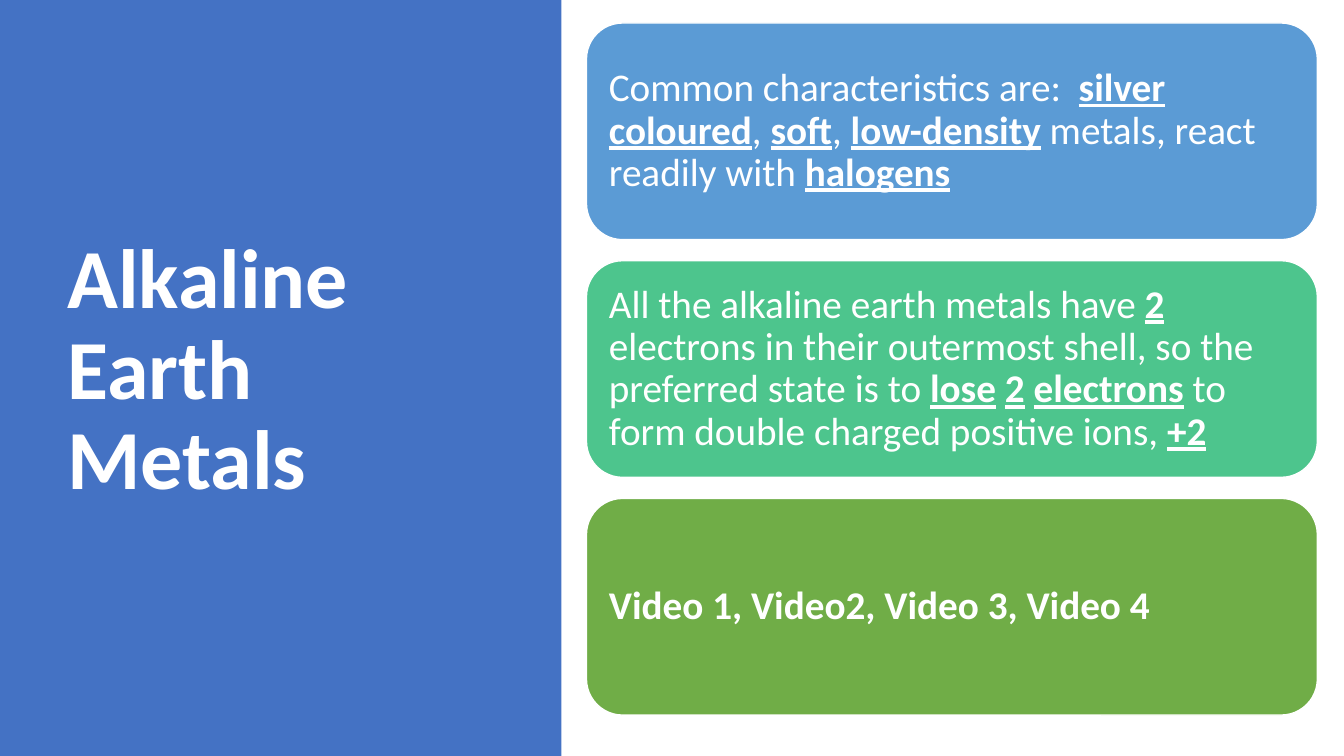
"""Build the slide on the characteristics of the alkaline earth metals."""
from pptx import Presentation
from pptx.dml.color import RGBColor
from pptx.enum.shapes import MSO_SHAPE
from pptx.enum.text import MSO_ANCHOR, PP_ALIGN
from pptx.util import Cm, Pt

WHITE = RGBColor(0xFF, 0xFF, 0xFF)
PANEL_BLUE = RGBColor(0x44, 0x72, 0xC4)
SKY_BLUE = RGBColor(0x5B, 0x9B, 0xD5)
MINT = RGBColor(0x4D, 0xC5, 0x8D)
GREEN = RGBColor(0x70, 0xAD, 0x47)

CARD_TOP, CARD_PITCH = 0.58, 5.99
FACTS = [
    (SKY_BLUE, False,
     "Common characteristics are:  |silver| |coloured|, |soft|, "
     "|low-density| metals, react readily with |halogens|"),
    (MINT, False,
     "All the alkaline earth metals have |2| electrons in their outermost "
     "shell, so the preferred state is to |lose| |2| |electrons| to form "
     "double charged positive ions, |+2|"),
    (GREEN, True, "Video 1, Video2, Video 3, Video 4"),
]


class SlideBuilder:
    """Hold the text style and the current slide."""

    font_name = "Calibri"
    text_color = WHITE
    line_spacing = 0.9

    def __init__(self, slide):
        self.slide = slide

    def style_run(self, run, size, bold, underline=False):
        """Apply the shared font to one run."""
        run.font.name = self.font_name
        run.font.size = Pt(size)
        run.font.color.rgb = self.text_color
        run.font.bold = bold
        run.font.underline = underline

    def block(self, kind, left, top, width, height, color):
        """Add a filled shape without outline or shadow."""
        block = self.slide.shapes.add_shape(
            kind, Cm(left), Cm(top), Cm(width), Cm(height))
        block.shadow.inherit = False
        block.fill.solid()
        block.fill.fore_color.rgb = color
        block.line.fill.background()
        return block

    def title(self, text, left, top, width, height):
        """Add the bold slide title, centred vertically."""
        frame = self.slide.shapes.add_textbox(
            Cm(left), Cm(top), Cm(width), Cm(height)).text_frame
        frame.word_wrap = True
        frame.vertical_anchor = MSO_ANCHOR.MIDDLE
        frame.text = text
        heading = frame.paragraphs[0]
        heading.line_spacing = self.line_spacing
        self.style_run(heading.runs[0], 60, True)

    def card(self, text, top, color, bold):
        """Add a rounded card; words between bars are key terms."""
        card = self.block(MSO_SHAPE.ROUNDED_RECTANGLE,
                          14.78, top, 18.42, 5.46, color)
        card.line.color.rgb = WHITE
        card.line.width = Pt(1)
        frame = card.text_frame
        frame.word_wrap = True
        frame.vertical_anchor = MSO_ANCHOR.MIDDLE
        frame.margin_left = frame.margin_right = Cm(0.3)
        frame.margin_top = frame.margin_bottom = Cm(0.3)
        fact = frame.paragraphs[0]
        fact.alignment = PP_ALIGN.LEFT
        fact.line_spacing = self.line_spacing
        for position, words in enumerate(text.split("|")):
            if words:
                is_key = position % 2 == 1
                run = fact.add_run()
                run.text = words
                self.style_run(run, 28, bold or is_key, is_key)


def main():
    """Assemble and save the slide."""
    deck = Presentation()
    deck.slide_width, deck.slide_height = Cm(33.87), Cm(19.05)
    builder = SlideBuilder(deck.slides.add_slide(deck.slide_layouts[6]))
    builder.block(MSO_SHAPE.RECTANGLE, 0, 0, 14.15, 19.05, PANEL_BLUE)
    builder.title("Alkaline Earth Metals", 1.45, 1.73, 10.57, 15.29)
    for row, (color, bold, text) in enumerate(FACTS):
        builder.card(text, CARD_TOP + row * CARD_PITCH, color, bold)
    deck.save("out.pptx")


if __name__ == "__main__":
    main()
